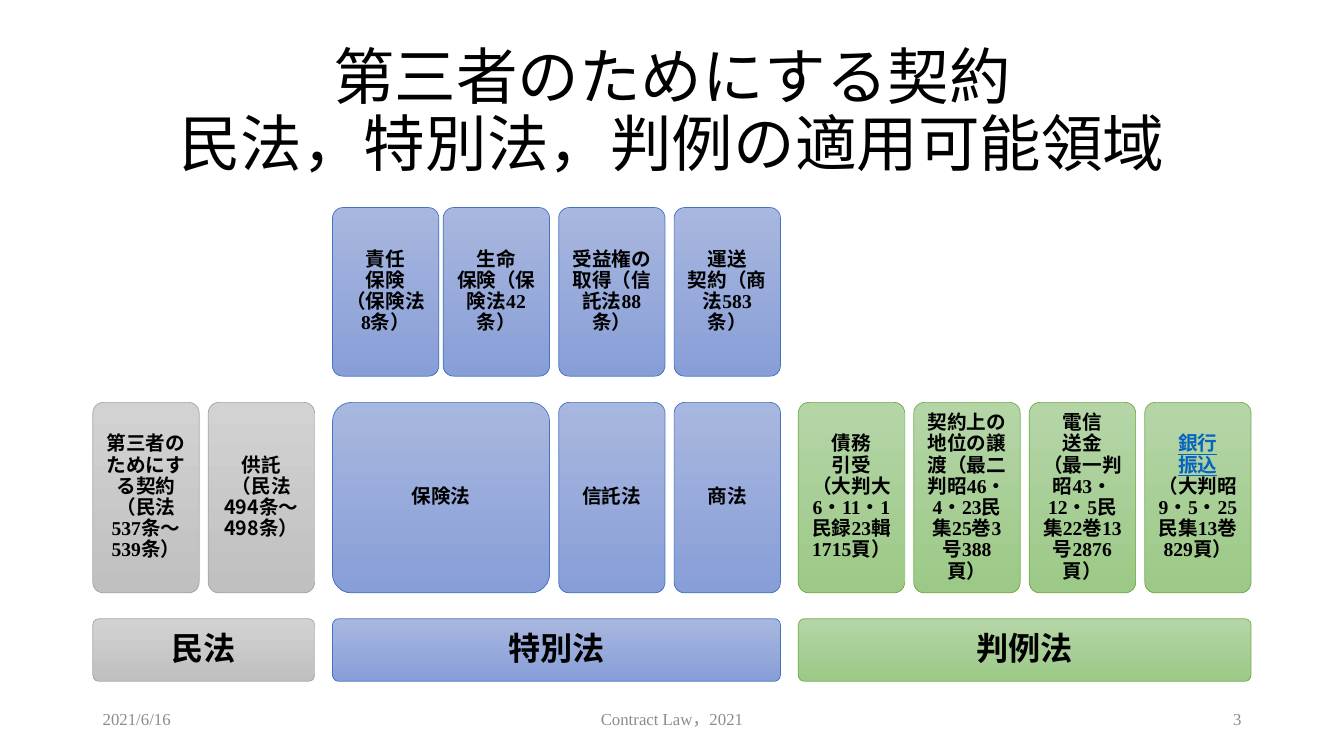
from dataclasses import dataclass

from lxml import etree
from pptx import Presentation
from pptx.dml.color import RGBColor
from pptx.enum import shapes, text
from pptx.oxml import ns
from pptx.util import Cm, Pt


@dataclass(frozen=True)
class Theme:
    sans: str = "Noto Sans CJK JP"
    serif: str = "Times New Roman"
    black: str = "000000"
    footer: str = "8C8C8C"
    link: str = "0563C1"
    # gradient top, gradient bottom, outline
    gray: tuple = ("D2D2D2", "C0C0C0", "A5A5A5")
    blue: tuple = ("A8B7DF", "889ED7", "4472C4")
    green: tuple = ("B5D5A7", "9CC987", "70AD47")
    title_size: int = 44
    source_size: int = 23
    box_size: int = 14
    footer_size: int = 12


THEME = Theme()

# Lengths in centimetres
LEFT = 2.34
BOX_WIDTH = 2.68
CASE_GAP, BOX_GAP, SOURCE_GAP = 0.11, 0.23, 0.45
# top, height of each row
CASE_ROW, BOX_ROW, SOURCE_ROW = (5.23, 4.25), (10.14, 4.8), (15.59, 1.58)

DEPOSIT = "供託\n（民法494条～498条）"
BANK_TRANSFER = "銀行\n振込\n（大判昭9・5・25民集13巻829頁）"

# Source of law, colours, and its boxes with the cases standing on each
SOURCES = [
    ("民法", THEME.gray, [
        ("第三者のためにする契約\n（民法537条～539条）", []),
        (DEPOSIT, []),
    ]),
    ("特別法", THEME.blue, [
        ("保険法", ["責任\n保険\n（保険法8条）", "生命\n保険（保険法42条）"]),
        ("信託法", ["受益権の取得（信託法88条）"]),
        ("商法", ["運送\n契約（商法583条）"]),
    ]),
    ("判例法", THEME.green, [
        ("債務\n引受\n（大判大6・11・1民録23輯1715頁）", []),
        ("契約上の地位の譲渡（最二判昭46・4・23民集25巻3号388頁）", []),
        ("電信\n送金\n（最一判昭43・12・5民集22巻13号2876頁）", []),
        (BANK_TRANSFER, []),
    ]),
]


def write(frame, content, size, color, latin, align, bold=False):
    frame.word_wrap = True
    frame.auto_size = text.MSO_AUTO_SIZE.NONE
    frame.vertical_anchor = text.MSO_ANCHOR.MIDDLE
    paragraph = frame.paragraphs[0]
    paragraph.text = content
    paragraph.alignment = align
    paragraph.line_spacing = 0.9
    font = paragraph.font
    font.size, font.bold, font.name = Pt(size), bold, latin
    font.color.rgb = RGBColor.from_string(color)
    properties = paragraph._p.pPr.find(ns.qn("a:defRPr"))
    etree.SubElement(properties, ns.qn("a:ea"), typeface=THEME.sans)
    return paragraph


def add_title(slide, content):
    title = slide.shapes.title
    title.left, title.top, title.width, title.height = Cm(LEFT), Cm(1.01), Cm(29.21), Cm(3.68)
    write(title.text_frame, content, THEME.title_size, THEME.black, THEME.sans,
          text.PP_ALIGN.CENTER)


def add_footer(slide, left, width, content, align):
    box = slide.shapes.add_textbox(Cm(left), Cm(17.65), Cm(width), Cm(1.01))
    write(box.text_frame, content, THEME.footer_size, THEME.footer, THEME.serif, align)


def add_box(slide, left, width, row, content, colors, size=THEME.box_size, inset=0.15):
    top, height = row
    shape = slide.shapes.add_shape(shapes.MSO_SHAPE.ROUNDED_RECTANGLE,
                                   Cm(left), Cm(top), Cm(width), Cm(height))
    shape.adjustments[0] = 0.1
    shape.shadow.inherit = False
    upper, lower, outline = colors
    shape.fill.gradient()
    shape.fill.gradient_angle = 270
    for stop, position, color in zip(shape.fill.gradient_stops, (0, 1), (upper, lower)):
        stop.position = position
        stop.color.rgb = RGBColor.from_string(color)
    shape.line.color.rgb = RGBColor.from_string(outline)
    shape.line.width = Pt(0.5)
    frame = shape.text_frame
    frame.margin_left = frame.margin_right = Cm(inset)
    frame.margin_top = frame.margin_bottom = Cm(inset)
    latin = THEME.sans if content == DEPOSIT else THEME.serif
    return write(frame, content, size, THEME.black, latin, text.PP_ALIGN.CENTER, bold=True)


def mark_as_link(runs):
    for run in runs:
        run.font.underline = True
        run.font.color.rgb = RGBColor.from_string(THEME.link)


def add_stack(slide, left, content, cases, colors):
    """Add a box with its cases above it and return the box's width."""
    count = max(len(cases), 1)
    width = count * BOX_WIDTH + (count - 1) * CASE_GAP
    paragraph = add_box(slide, left, width, BOX_ROW, content, colors)
    if content == BANK_TRANSFER:
        mark_as_link(paragraph.runs[:2])
    for index, case in enumerate(cases):
        case_left = left + index * (BOX_WIDTH + CASE_GAP)
        add_box(slide, case_left, BOX_WIDTH, CASE_ROW, case, colors)
    return width


def add_source(slide, left, name, colors, boxes):
    """Add a source of law with everything above it and return its right edge."""
    box_left = left
    for content, cases in boxes:
        box_left += add_stack(slide, box_left, content, cases, colors) + BOX_GAP
    right = box_left - BOX_GAP
    add_box(slide, left, right - left, SOURCE_ROW, name, colors, THEME.source_size, 0.25)
    return right


def main():
    presentation = Presentation()
    presentation.slide_width, presentation.slide_height = Cm(33.87), Cm(19.05)
    slide = presentation.slides.add_slide(presentation.slide_layouts[5])
    add_title(slide, "第三者のためにする契約\n民法，特別法，判例の適用可能領域")
    left = LEFT
    for name, colors, boxes in SOURCES:
        left = add_source(slide, left, name, colors, boxes) + SOURCE_GAP
    add_footer(slide, LEFT, 7.62, "2021/6/16", text.PP_ALIGN.LEFT)
    add_footer(slide, 11.22, 11.43, "Contract Law，2021", text.PP_ALIGN.CENTER)
    add_footer(slide, 23.92, 7.62, "3", text.PP_ALIGN.RIGHT)
    presentation.save("out.pptx")


if __name__ == "__main__":
    main()
